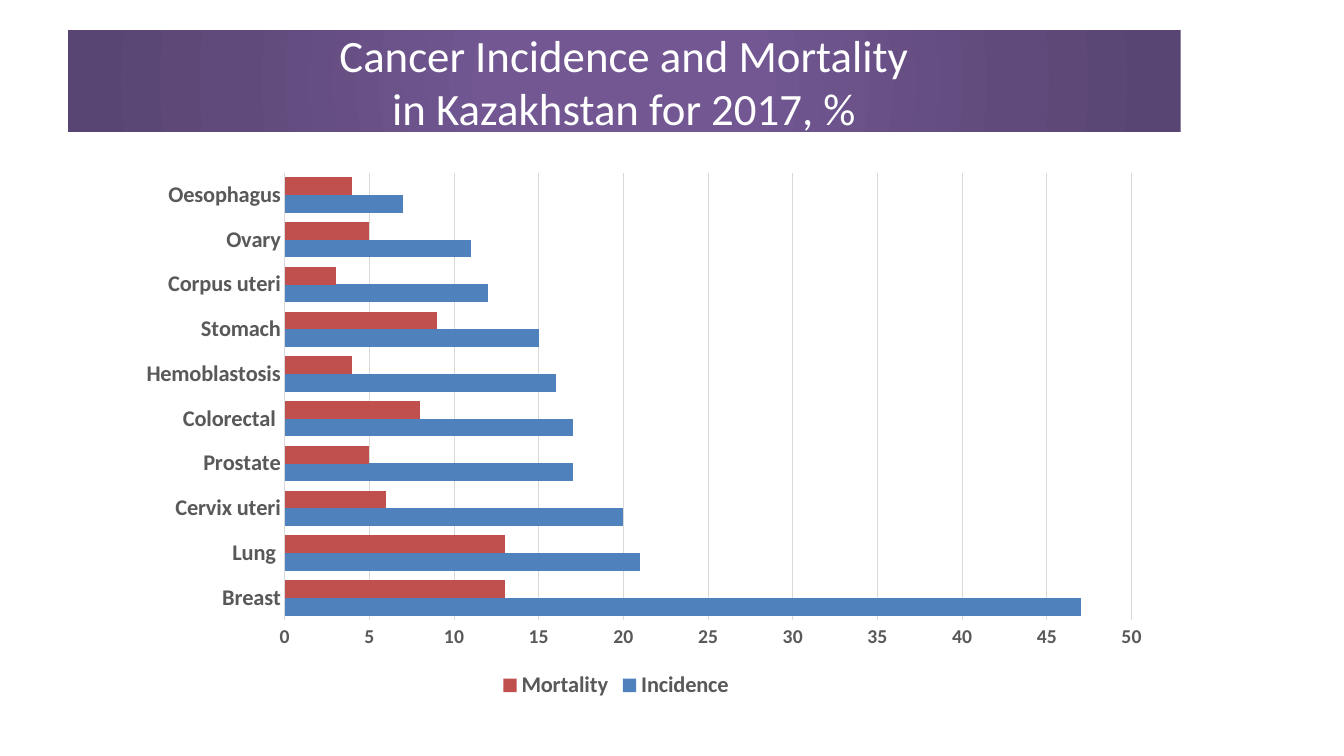
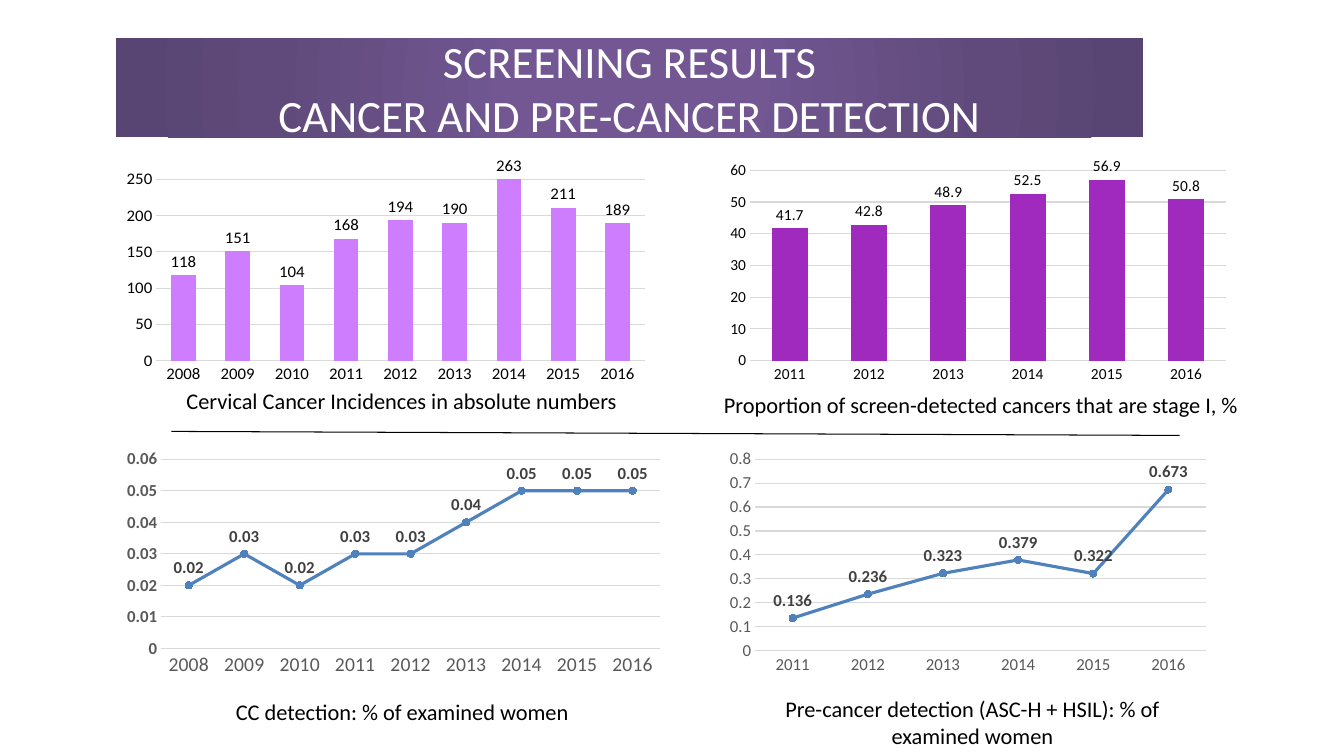
from pptx import Presentation, util as u
from pptx.chart.data import CategoryChartData
from pptx.dml.color import RGBColor
from pptx.enum import chart as ch, shapes, text
from pptx.oxml import parse_xml
from pptx.oxml.ns import nsdecls

FONT = "Calibri"
COLORS = {
    "black": "000000", "white": "FFFFFF", "gray": "595959", "dark": "404040",
    "grid": "D9D9D9", "blue": "4F81BD", "red": "C0504D", "lilac": "CE7DFE",
    "purple": "9F2ABD", "band": "725792", "band_mid": "604A7B", "band_edge": "594573",
}
BAND_STOPS = [(0, "band"), (23, "band"), (69, "band_mid"), (97, "band_edge")]
BAR, COLUMN, LINE = (ch.XL_CHART_TYPE.BAR_CLUSTERED, ch.XL_CHART_TYPE.COLUMN_CLUSTERED,
                     ch.XL_CHART_TYPE.LINE_MARKERS)
COLS, ROWS = (1.15, 7.14), (1.55, 4.41)

SITES = [
    ("Breast", 47, 13), ("Lung ", 21, 13), ("Сervix uteri", 20, 6), ("Prostate", 17, 5),
    ("Colorectal ", 17, 8), ("Hemoblastosis", 16, 4), ("Stomach", 15, 9),
    ("Corpus uteri", 12, 3), ("Ovary", 11, 5), ("Oesophagus", 7, 4),
]
NAMES, INCIDENCE, MORTALITY = zip(*SITES)


def years(first):
    return [str(year) for year in range(first, 2017)]


GRAY_TEXT = {"size": 12, "color": "gray"}
LABEL_TEXT = {"size": 12, "color": "dark", "bold": True}
BLACK_12, BLACK_11 = ({"size": size, "color": "black"} for size in (12, 11))

BURDEN = {
    "kind": BAR, "at": (0.67, 1.55, 10.88, 5.43), "cats": NAMES,
    "series": [("Incidence", INCIDENCE, "blue"), ("Mortality", MORTALITY, "red")],
    "cat_text": {"size": 16, "color": "gray", "bold": True},
    "val_text": {"size": 14, "color": "gray", "bold": True},
    "legend_text": {"size": 16, "color": "gray", "bold": True},
    "plot": {"gap_width": 53, "overlap": 1},
    "inner": {"x": 0.198, "y": 0.03, "w": 0.772, "h": 0.818},
}
SCREENING = [
    {"kind": COLUMN, "at": (COLS[0], ROWS[0], 5.35, 2.3), "cats": years(2008),
     "series": [("Series 1", (118, 151, 104, 168, 194, 190, 263, 211, 189), "lilac")],
     "cat_text": BLACK_12, "val_text": BLACK_12, "label_text": BLACK_12,
     "plot": {"gap_width": 120}, "val_axis": {"maximum_scale": 250}},
    {"kind": LINE, "at": (COLS[0], ROWS[1], 5.51, 2.35), "cats": years(2008),
     "series": [("Series 1", (0.02, 0.03, 0.02, 0.03, 0.03, 0.04, 0.05, 0.05, 0.05), "blue")],
     "cat_text": {"size": 14, "color": "gray"}, "val_text": {**GRAY_TEXT, "bold": True},
     "label_text": LABEL_TEXT},
    {"kind": COLUMN, "at": (COLS[1], ROWS[0], 5.12, 2.3), "cats": years(2011),
     "series": [("Series 1", (41.7, 42.8, 48.9, 52.5, 56.9, 50.8), "purple")],
     "cat_text": BLACK_11, "val_text": BLACK_11, "label_text": BLACK_11,
     "plot": {"gap_width": 120, "overlap": -27}},
    {"kind": LINE, "at": (COLS[1], ROWS[1], 4.92, 2.33), "cats": years(2011),
     "series": [("Series 1", (0.136, 0.236, 0.323, 0.379, 0.322, 0.673), "blue")],
     "cat_text": GRAY_TEXT, "val_text": GRAY_TEXT, "label_text": LABEL_TEXT},
]
CAPTIONS = [
    ("Cervical Cancer Incidences in absolute numbers", (1.75, 3.79, 4.52, 0.37), False),
    ("CC detection: % of examined women", (2.24, 6.88, 3.55, 0.37), False),
    ("Proportion of screen-detected cancers that are stage I, %", (7.05, 3.83, 5.36, 0.37), True),
    ("Pre-cancer detection (ASC-H + HSIL): % of examined women", (7.57, 6.85, 4.15, 0.64), True),
]
SLIDES = [
    {"title": "Cancer Incidence and Mortality\vin Kazakhstan for 2017, %",
     "band": (0.67, 0.3, 11.04, 1.01), "charts": [BURDEN]},
    {"title": "SCREENING RESULTS\vCANCER AND PRE-CANCER DETECTION",
     "band": (1.15, 0.38, 10.19, 0.98), "charts": SCREENING, "captions": CAPTIONS,
     "divider": (1.7, 4.28, 11.7, 4.32)},
]


def rgb(name):
    return RGBColor.from_string(COLORS[name])


def inches(lengths):
    return [u.Inches(length) for length in lengths]


def assign(target, values):
    for key, value in values.items():
        setattr(target, key, value)


def style(font, size, color, bold=False):
    assign(font, {"name": FONT, "size": u.Pt(size), "bold": bold})
    font.color.rgb = rgb(color)


def stroke(line, color, width=0.75):
    line.color.rgb = rgb(color)
    line.width = u.Pt(width)


def paint(fill, color):
    fill.solid()
    fill.fore_color.rgb = rgb(color)


def add_band(slide, words, at):
    title = slide.shapes.title
    assign(title, dict(zip(("left", "top", "width", "height"), inches(at))))
    stops = "".join(f'<a:gs pos="{pos * 1000}"><a:srgbClr val="{COLORS[color]}"/></a:gs>'
                    for pos, color in BAND_STOPS)
    title._element.spPr.append(parse_xml(
        f'<a:gradFill {nsdecls("a")} rotWithShape="1"><a:gsLst>{stops}</a:gsLst>'
        '<a:path path="circle"><a:fillToRect l="50000" t="50000" r="50000" b="50000"/>'
        '</a:path></a:gradFill>'))
    frame = title.text_frame
    frame.text = words
    assign(frame, {"vertical_anchor": text.MSO_ANCHOR.MIDDLE, "word_wrap": True,
                   "auto_size": text.MSO_AUTO_SIZE.NONE})
    frame.paragraphs[0].alignment = text.PP_ALIGN.CENTER
    for run in frame.paragraphs[0].runs:
        style(run.font, 32, "white")


def format_axes(chart, item):
    for axis, key in ((chart.category_axis, "cat_text"), (chart.value_axis, "val_text")):
        assign(axis, {"major_tick_mark": ch.XL_TICK_MARK.NONE,
                      "minor_tick_mark": ch.XL_TICK_MARK.NONE})
        style(axis.tick_labels.font, **item[key])
    stroke(chart.category_axis.format.line, "grid")
    chart.value_axis.format.line.fill.background()
    stroke(chart.value_axis.major_gridlines.format.line, "grid")
    assign(chart.value_axis, item.get("val_axis", {}))


def format_series(series, color, is_line):
    if not is_line:
        series.invert_if_negative = False
        paint(series.format.fill, color)
        return
    series.smooth = False
    stroke(series.format.line, color, 2.25)
    assign(series.marker, {"style": ch.XL_MARKER_STYLE.CIRCLE, "size": 5})
    paint(series.marker.format.fill, color)
    stroke(series.marker.format.line, color)


def set_inner_plot(chart, shares):
    area = chart._chartSpace.chart.plotArea
    for old in area.findall("{*}layout"):
        area.remove(old)
    values = "".join(f'<c:{key} val="{share}"/>' for key, share in shares.items())
    area.insert(0, parse_xml(
        f'<c:layout {nsdecls("c")}><c:manualLayout><c:layoutTarget val="inner"/>'
        f'<c:xMode val="edge"/><c:yMode val="edge"/>{values}</c:manualLayout></c:layout>'))


def add_chart(slide, item):
    data = CategoryChartData()
    data.categories = item["cats"]
    for name, values, _ in item["series"]:
        data.add_series(name, values)
    chart = slide.shapes.add_chart(item["kind"], *inches(item["at"]), data).chart
    style(chart.font, 10, "black")
    assign(chart, {"has_title": False, "has_legend": "legend_text" in item})
    plot, is_line = chart.plots[0], item["kind"] == LINE
    assign(plot, {"vary_by_categories": False, **item.get("plot", {})})
    format_axes(chart, item)
    for series, (_, _, color) in zip(plot.series, item["series"]):
        format_series(series, color, is_line)
        if "label_text" in item:
            labels = series.data_labels
            labels.show_value = True
            style(labels.font, **item["label_text"])
            if is_line:
                labels.position = ch.XL_LABEL_POSITION.ABOVE
    if chart.has_legend:
        assign(chart.legend, {"position": ch.XL_LEGEND_POSITION.BOTTOM,
                              "include_in_layout": False})
        style(chart.legend.font, **item["legend_text"])
    if "inner" in item:
        set_inner_plot(chart, item["inner"])


def add_caption(slide, words, at, wraps):
    frame = slide.shapes.add_textbox(*inches(at)).text_frame
    frame.text = words
    assign(frame, {"word_wrap": wraps, "auto_size": text.MSO_AUTO_SIZE.SHAPE_TO_FIT_TEXT})
    caption = frame.paragraphs[0]
    if wraps:
        caption.alignment = text.PP_ALIGN.CENTER
    style(caption.runs[0].font, 16, "black")


def add_divider(slide, ends):
    divider = slide.shapes.add_connector(shapes.MSO_CONNECTOR.STRAIGHT, *inches(ends))
    stroke(divider.line, "black")
    divider._element.spPr.append(parse_xml(f'<a:effectLst {nsdecls("a")}/>'))


def main():
    deck = Presentation()
    assign(deck, {"slide_width": u.Inches(13.33), "slide_height": u.Inches(7.5)})
    for content in SLIDES:
        slide = deck.slides.add_slide(deck.slide_layouts[5])
        add_band(slide, content["title"], content["band"])
        for item in content["charts"]:
            add_chart(slide, item)
        for caption in content.get("captions", []):
            add_caption(slide, *caption)
        if "divider" in content:
            add_divider(slide, content["divider"])
    deck.save("out.pptx")


if __name__ == "__main__":
    main()
